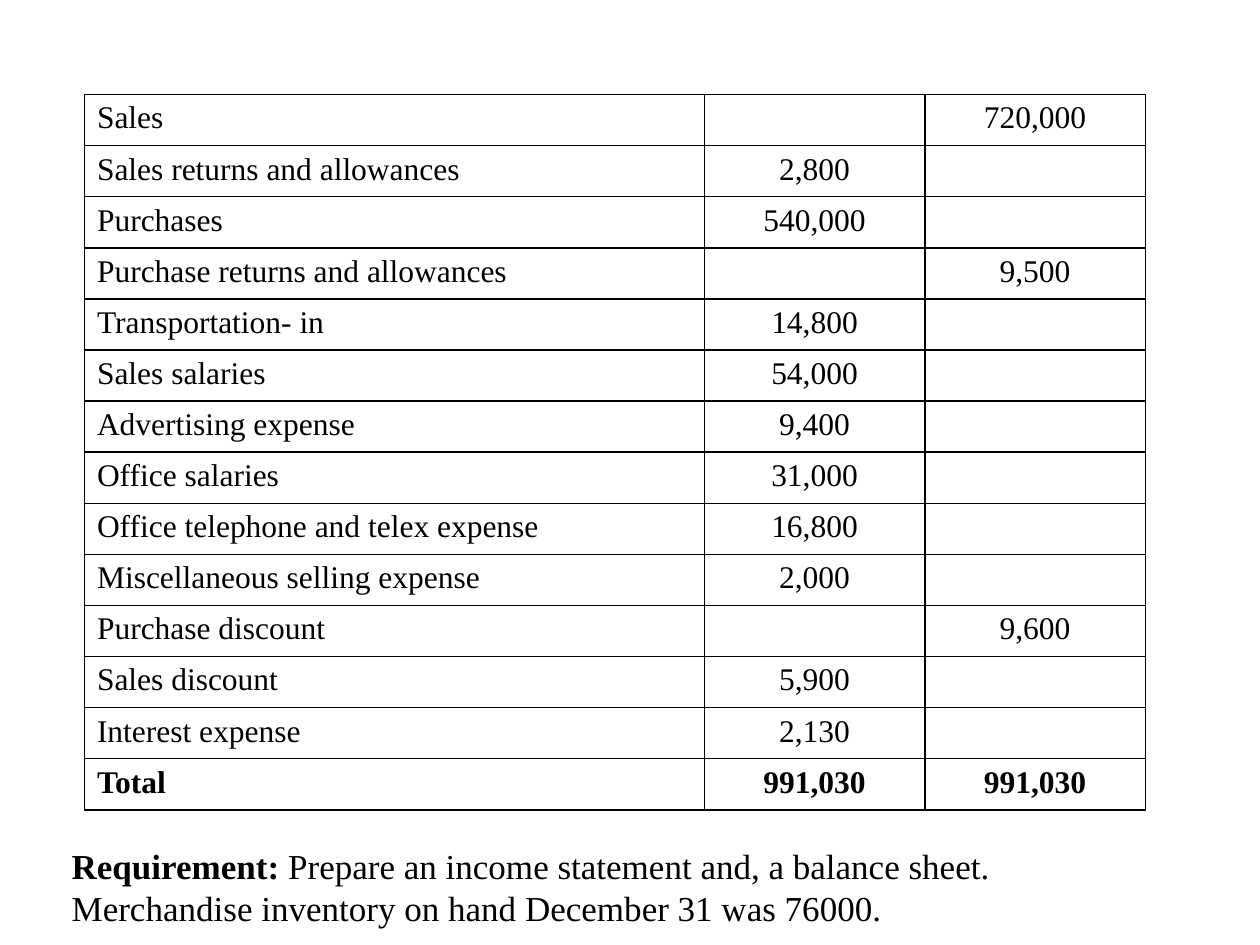
from lxml import etree
from pptx import Presentation
from pptx.dml.color import RGBColor
from pptx.enum import text
from pptx.oxml.ns import qn
from pptx.util import Inches, Pt

# Content: account, debit, credit
TRIAL_BALANCE = [
    ("Sales", "", "720,000"),
    ("Sales returns and allowances", "2,800", ""),
    ("Purchases", "540,000", ""),
    ("Purchase returns and allowances", "", "9,500"),
    ("Transportation- in", "14,800", ""),
    ("Sales salaries", "54,000", ""),
    ("Advertising expense", "9,400", ""),
    ("Office salaries", "31,000", ""),
    ("Office telephone and telex expense", "16,800", ""),
    ("Miscellaneous selling expense", "2,000", ""),
    ("Purchase discount", "", "9,600"),
    ("Sales discount", "5,900", ""),
    ("Interest expense", "2,130", ""),
    ("Total", "991,030", "991,030"),
]
REQUIREMENT = [
    ("Requirement: ", True),
    ("Prepare an income statement and, a balance sheet. "
     "Merchandise inventory on hand December 31 was 76000.", False),
]

COLORS = {"ink": "000000"}
FONT = "Times New Roman"
COLUMN_WIDTHS = (4.92, 1.75, 1.75)
TABLE_HEIGHT = 5.68


def style_font(font, size):
    font.name = FONT
    font.size = Pt(size)
    font.color.rgb = RGBColor.from_string(COLORS["ink"])


def add_borders(cell):
    properties = cell._tc.get_or_add_tcPr()
    for position, side in enumerate(("lnL", "lnR", "lnT", "lnB")):
        line = etree.Element(qn(f"a:{side}"), w=str(Pt(1)))
        fill = etree.SubElement(line, qn("a:solidFill"))
        etree.SubElement(fill, qn("a:srgbClr"), val=COLORS["ink"])
        properties.insert(position, line)


prs = Presentation()
prs.slide_width, prs.slide_height = Inches(10), Inches(7.5)
slide = prs.slides.add_slide(prs.slide_layouts[6])

# Trial balance table
balance = slide.shapes.add_table(
    len(TRIAL_BALANCE), len(COLUMN_WIDTHS), Inches(0.67), Inches(0.75),
    Inches(sum(COLUMN_WIDTHS)), Inches(TABLE_HEIGHT)).table
balance.first_row = balance.horz_banding = False
for column, width in zip(balance.columns, COLUMN_WIDTHS):
    column.width = Inches(width)

for r, entry in enumerate(TRIAL_BALANCE):
    for c, value in enumerate(entry):
        cell = balance.cell(r, c)
        cell.fill.background()
        add_borders(cell)
        cell.text = value
        line = cell.text_frame.paragraphs[0]
        style_font(line.font, 18)
        line.font.bold = entry[0] == "Total"
        if c > 0:
            line.alignment = text.PP_ALIGN.CENTER

# Requirement note
note = slide.shapes.add_textbox(
    Inches(0.47), Inches(6.65), Inches(8.75), Inches(0.77)).text_frame
note.word_wrap = True
note.auto_size = text.MSO_AUTO_SIZE.SHAPE_TO_FIT_TEXT
task = note.paragraphs[0]
style_font(task.font, 20)
for words, bold in REQUIREMENT:
    run = task.add_run()
    run.text = words
    run.font.bold = bold

prs.save("out.pptx")
